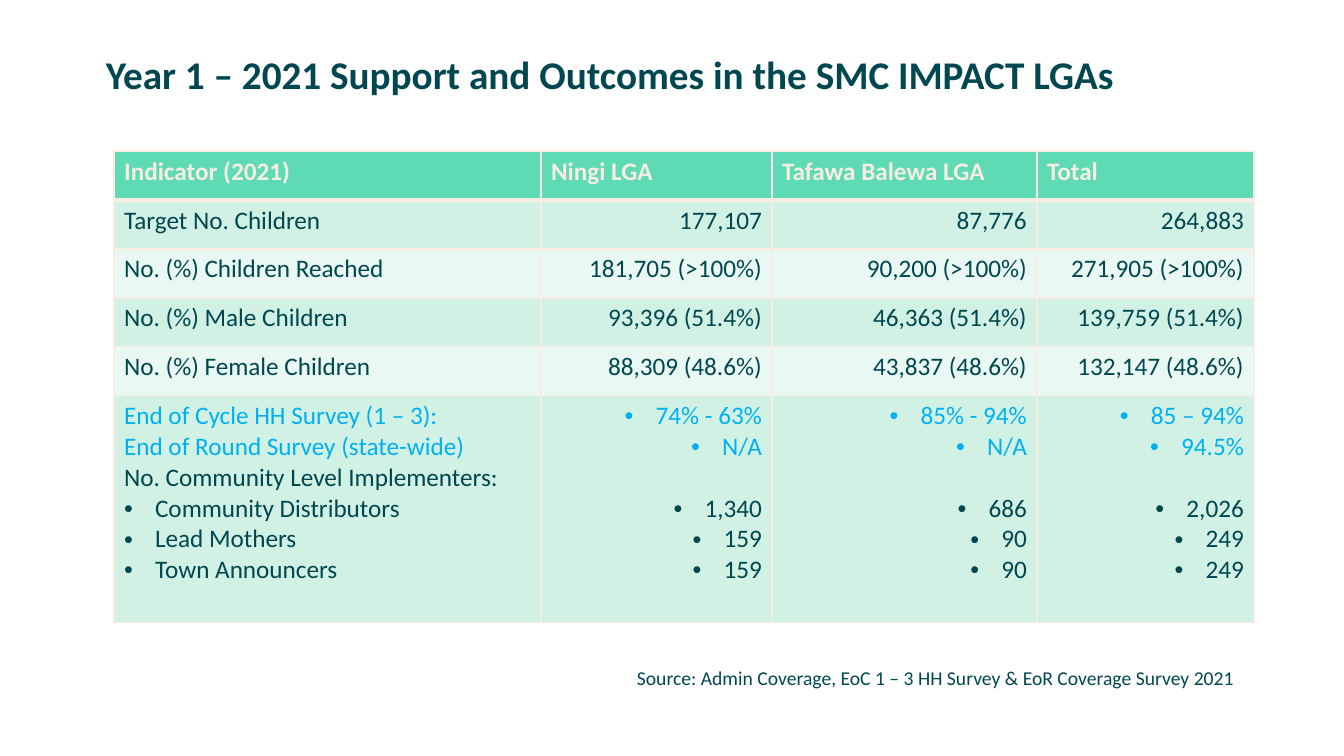
"""Build the slide on 2021 support and outcomes in the SMC IMPACT LGAs."""
from dataclasses import dataclass

from lxml.etree import SubElement
from pptx import Presentation
from pptx.dml.color import RGBColor
from pptx.enum.text import PP_ALIGN
from pptx.oxml.ns import qn
from pptx.util import Emu, Pt


@dataclass(frozen=True)
class Theme:
    font: str = "Calibri"
    ink: str = "004750"
    sky: str = "00B0F0"
    cream: str = "F7EDE3"
    head: str = "5EDBB5"
    bands: tuple = ("D2F1E5", "EAF8F3")
    title: int = 28
    body: int = 18
    note: int = 14


THEME = Theme()
SCALE = 12192000 / 1344
COLS = (427, 231, 265, 217)
ROWS = (49, 49, 49, 49, 49, 227)
HEADS = ("Indicator (2021)", "Ningi LGA", "Tafawa Balewa LGA", "Total")
COUNTS = (
    ("Target No. Children", "177,107", "87,776", "264,883"),
    ("No. (%) Children Reached", "181,705 (>100%)", "90,200 (>100%)", "271,905 (>100%)"),
    ("No. (%) Male Children", "93,396 (51.4%)", "46,363 (51.4%)", "139,759 (51.4%)"),
    ("No. (%) Female Children", "88,309 (48.6%)", "43,837 (48.6%)", "132,147 (48.6%)"),
)
SURVEYS = (
    ("End of Cycle HH Survey (1 – 3):", "74% - 63%", "85% - 94%", "85 – 94%"),
    ("End of Round Survey (state-wide)", "N/A", "N/A", "94.5%"),
)
TEAM = "No. Community Level Implementers:"
STAFF = (
    ("Community Distributors", "1,340", "686", "2,026"),
    ("Lead Mothers", "159", "90", "249"),
    ("Town Announcers", "159", "90", "249"),
)


def px(count):
    return Emu(round(count * SCALE))


def style(para, text, color, size=THEME.body, bold=False, align=PP_ALIGN.LEFT):
    para.text = text
    para.alignment = align
    font = para.font
    font.name, font.size, font.bold = THEME.font, Pt(size), bold
    font.color.rgb = RGBColor.from_string(color)


def bullet(para):
    props = para._p.get_or_add_pPr()
    props.set("marL", str(px(31)))
    props.set("indent", str(-px(31)))
    SubElement(props, qn("a:buFont"), typeface="Arial")
    SubElement(props, qn("a:buChar"), char="•")


def add_text(slide, box, text, size, bold=False):
    frame = slide.shapes.add_textbox(*map(px, box)).text_frame
    frame.word_wrap = True
    style(frame.paragraphs[0], text, THEME.ink, size, bold)


def paint(cell, fill, top=1, bottom=1):
    props = cell._tc.get_or_add_tcPr()
    for side, width in (("L", 1), ("R", 1), ("T", top), ("B", bottom)):
        line = SubElement(props, qn(f"a:ln{side}"), w=str(Pt(width)))
        solid = SubElement(line, qn("a:solidFill"))
        SubElement(solid, qn("a:srgbClr"), val=THEME.cream)
    cell.fill.solid()
    cell.fill.fore_color.rgb = RGBColor.from_string(fill)


def fill_list(cell, col):
    lines = [(row[col], THEME.sky, col > 0) for row in SURVEYS]
    if col == 0:
        lines.append((TEAM, THEME.ink, False))
    lines += [(row[col], THEME.ink, True) for row in STAFF]
    align = PP_ALIGN.RIGHT if col else PP_ALIGN.LEFT
    frame = cell.text_frame
    for i, (text, color, dot) in enumerate(lines):
        para = frame.add_paragraph() if i else frame.paragraphs[0]
        style(para, text, color, align=align)
        if col and i == len(SURVEYS):
            para.space_before = Pt(22)
        if dot:
            bullet(para)


def add_grid(slide):
    shape = slide.shapes.add_table(
        len(ROWS), len(COLS), px(114), px(151), px(sum(COLS)), px(sum(ROWS)))
    table = shape.table
    table.horz_banding = False
    for column, width in zip(table.columns, COLS):
        column.width = px(width)
    for row, height in zip(table.rows, ROWS):
        row.height = px(height)
    for col, text in enumerate(HEADS):
        cell = table.cell(0, col)
        style(cell.text_frame.paragraphs[0], text, THEME.cream, bold=True)
        paint(cell, THEME.head, bottom=3)
    for r, row in enumerate(COUNTS, 1):
        for col, text in enumerate(row):
            cell = table.cell(r, col)
            align = PP_ALIGN.RIGHT if col else PP_ALIGN.LEFT
            style(cell.text_frame.paragraphs[0], text, THEME.ink, align=align)
            paint(cell, THEME.bands[(r - 1) % 2], top=3 if r == 1 else 1)
    last = len(ROWS) - 1
    for col in range(len(COLS)):
        fill_list(table.cell(last, col), col)
        paint(table.cell(last, col), THEME.bands[0])


def main():
    deck = Presentation()
    deck.slide_width, deck.slide_height = px(1344), px(756)
    slide = deck.slides.add_slide(deck.slide_layouts[6])
    add_text(slide, (96, 45, 1157, 57),
             "Year 1 – 2021 Support and Outcomes in the SMC IMPACT LGAs",
             THEME.title, bold=True)
    add_grid(slide)
    add_text(slide, (627, 661, 643, 34),
             "Source: Admin Coverage, EoC 1 – 3 HH Survey & EoR Coverage Survey 2021",
             THEME.note)
    deck.save("out.pptx")


if __name__ == "__main__":
    main()
